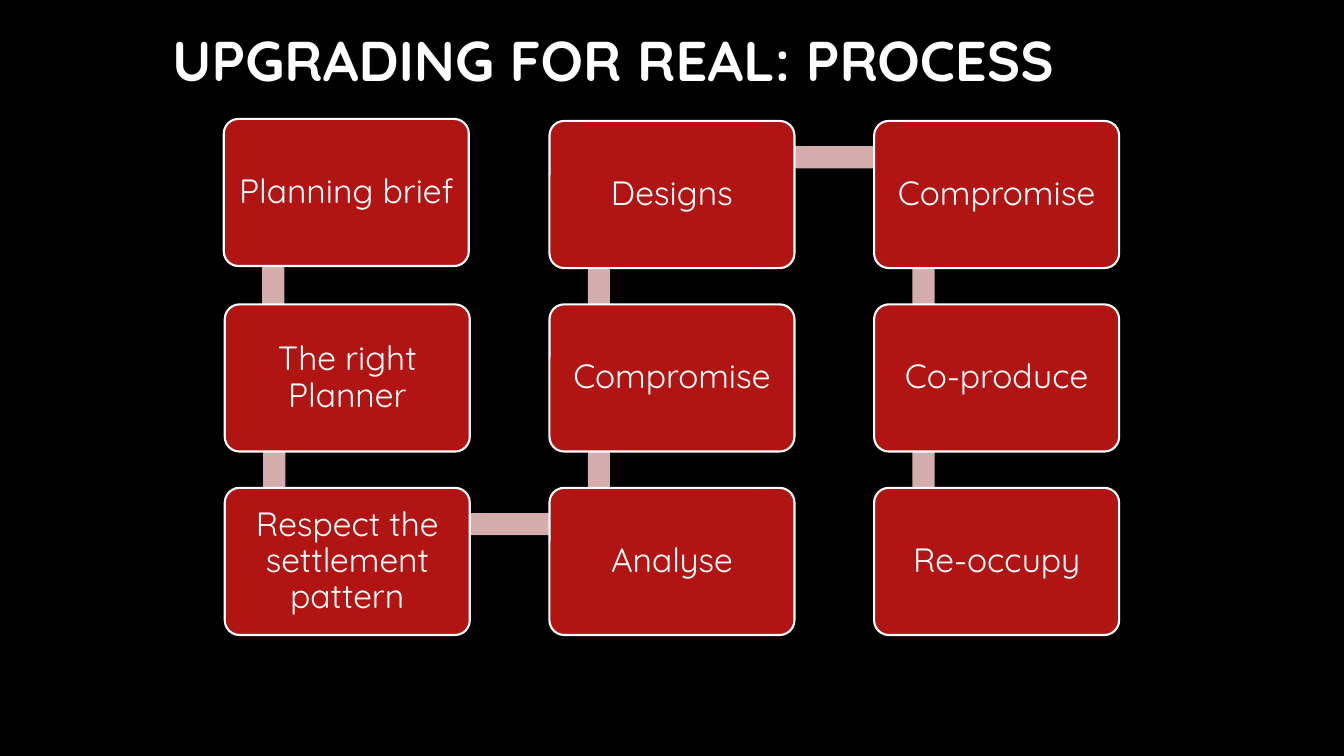
from itertools import pairwise

from pptx import Presentation
from pptx.dml.color import RGBColor
from pptx.enum.shapes import MSO_SHAPE as Shape
from pptx.enum.text import MSO_ANCHOR as Anchor, MSO_AUTO_SIZE as AutoSize, PP_ALIGN as Align
from pptx.util import Inches, Pt

COLORS = {"back": "000000", "step": "B01513", "band": "D4ACAB", "text": "FFFFFF"}
FONT = "Quicksand"

LEFT, TOP = 2.23, 1.2
COLUMN_PITCH, ROW_PITCH = 3.22, 1.82
STEP_WIDTH, STEP_HEIGHT = 2.43, 1.46
JOINT_X, JOINT_Y = 0.49, 0.36
BAND = 0.22

STEPS = [
    ("Planning brief", 0, 0),
    ("The right Planner", 0, 1),
    ("Respect the settlement pattern", 0, 2),
    ("Analyse", 1, 2),
    ("Compromise", 1, 1),
    ("Designs", 1, 0),
    ("Compromise", 2, 0),
    ("Co-produce", 2, 1),
    ("Re-occupy", 2, 2),
]


def color(name):
    return RGBColor.from_string(COLORS[name])


def corner(column, row):
    nudge = 0.01 if (column, row) == (0, 0) else 0
    return LEFT + column * COLUMN_PITCH - nudge, TOP + row * ROW_PITCH - 2 * nudge


class ProcessSlide:
    def __init__(self, deck):
        self.page = deck.slides.add_slide(deck.slide_layouts[6])
        fill = self.page.background.fill
        fill.solid()
        fill.fore_color.rgb = color("back")

    def add_span(self, para, text, size, bold=False):
        span = para.add_run()
        span.text = text
        span.font.name = FONT
        span.font.size = Pt(size)
        span.font.bold = bold
        span.font.color.rgb = color("text")

    def add_box(self, kind, left, top, width, height, fill):
        box = self.page.shapes.add_shape(
            kind, Inches(left), Inches(top), Inches(width), Inches(height))
        box.shadow.inherit = False
        box.fill.solid()
        box.fill.fore_color.rgb = color(fill)
        return box

    def add_title(self, text):
        box = self.page.shapes.add_textbox(
            Inches(1.61), Inches(0.2), Inches(11.22), Inches(0.77))
        frame = box.text_frame
        frame.word_wrap = True
        frame.auto_size = AutoSize.SHAPE_TO_FIT_TEXT
        self.add_span(frame.paragraphs[0], text, 40, bold=True)

    def add_band(self, start, end):
        (x1, y1), (x2, y2) = corner(*start), corner(*end)
        left, top = min(x1, x2) + JOINT_X, min(y1, y2) + JOINT_Y
        if start[0] == end[0]:
            area = (left - BAND / 2, top, BAND, abs(y2 - y1))
        else:
            area = (left, top - BAND / 2, abs(x2 - x1), BAND)
        self.add_box(Shape.RECTANGLE, *area, "band").line.fill.background()

    def add_step(self, text, column, row):
        box = self.add_box(Shape.ROUNDED_RECTANGLE, *corner(column, row),
                           STEP_WIDTH, STEP_HEIGHT, "step")
        box.adjustments[0] = 0.1
        box.line.color.rgb = color("text")
        box.line.width = Pt(1.5)
        frame = box.text_frame
        frame.word_wrap = True
        frame.vertical_anchor = Anchor.MIDDLE
        frame.margin_left = frame.margin_right = Inches(0.09)
        frame.margin_top = frame.margin_bottom = Inches(0.09)
        para = frame.paragraphs[0]
        para.alignment = Align.CENTER
        para.line_spacing = 0.9
        self.add_span(para, text, 24)


def main():
    deck = Presentation()
    deck.slide_width, deck.slide_height = Inches(13.33), Inches(7.5)
    slide = ProcessSlide(deck)
    for start, end in pairwise(STEPS):
        slide.add_band(start[1:], end[1:])
    for step in STEPS:
        slide.add_step(*step)
    slide.add_title("UPGRADING FOR REAL: PROCESS")
    deck.save("out.pptx")


if __name__ == "__main__":
    main()
